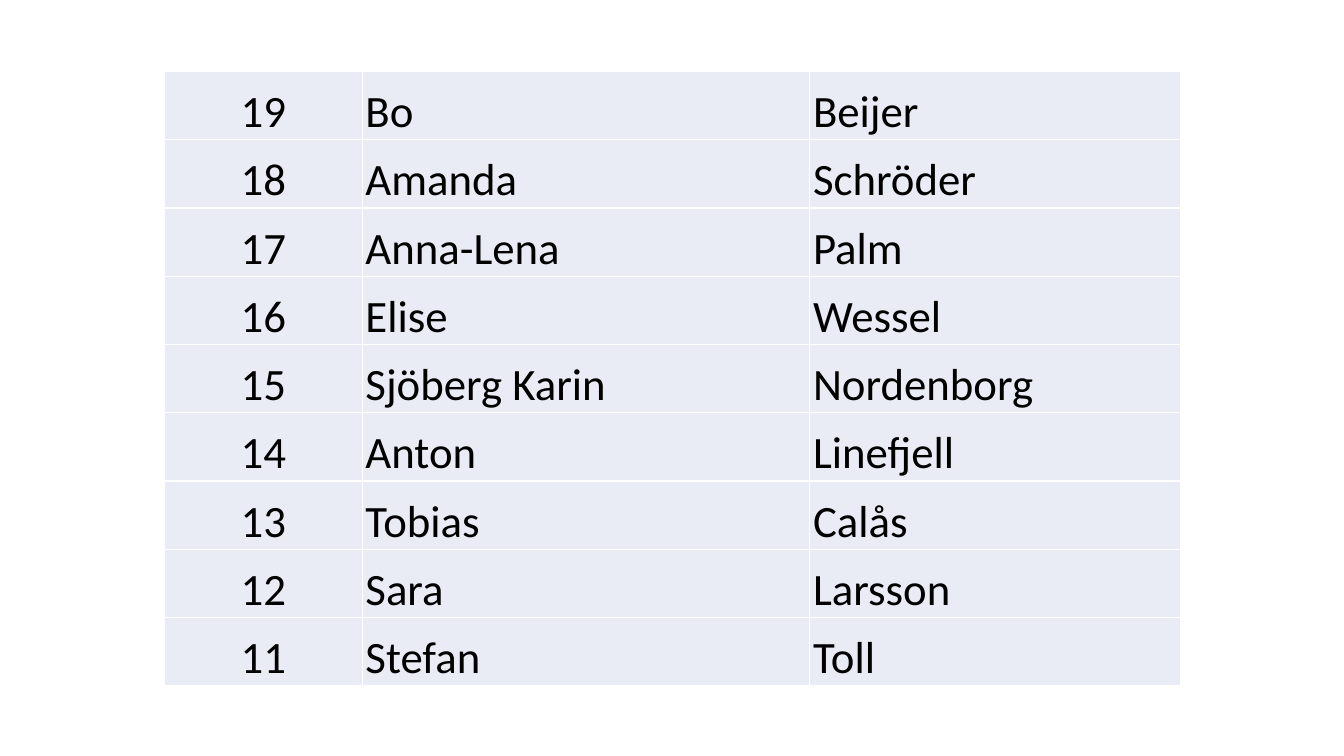
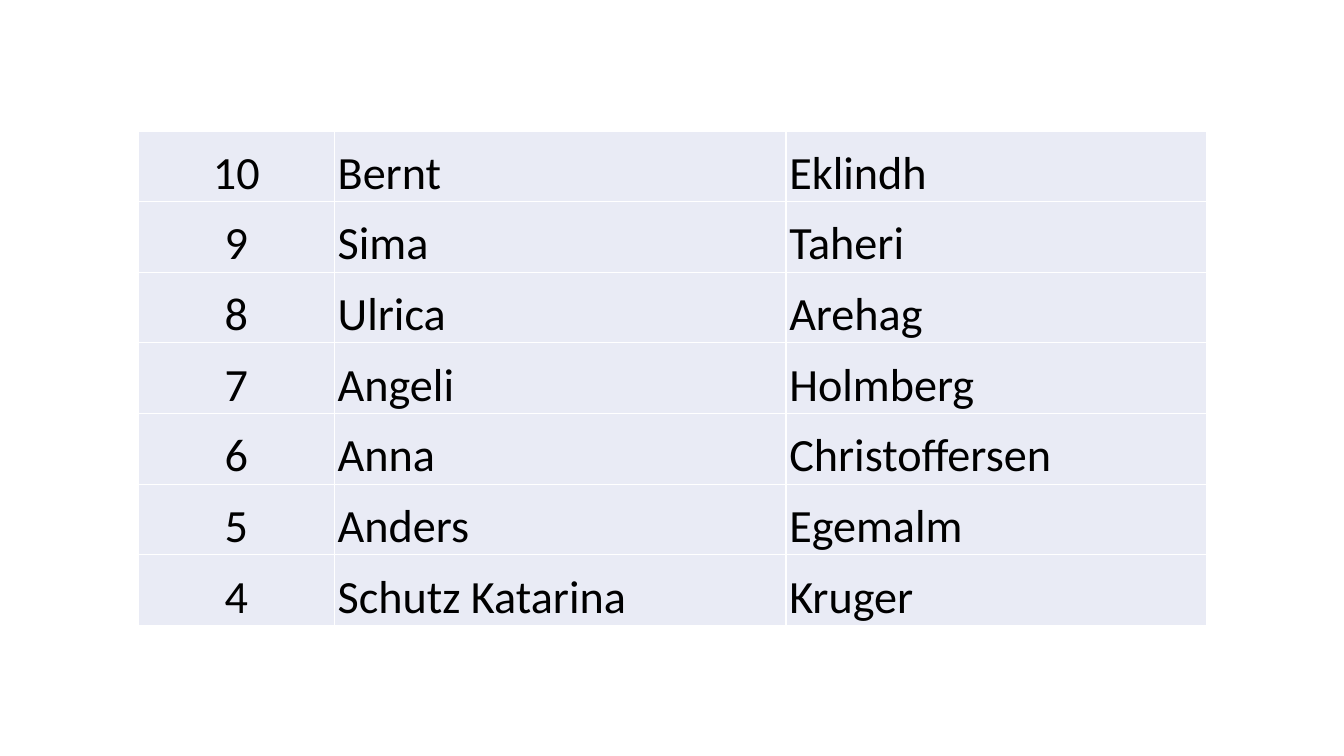
import pptx
import pptx.dml.color
import pptx.enum.text
import pptx.oxml
import pptx.oxml.ns
import pptx.util

Cm = pptx.util.Cm
Pt = pptx.util.Pt
RGBColor = pptx.dml.color.RGBColor
PP_ALIGN = pptx.enum.text.PP_ALIGN

BLACK = RGBColor(0x00, 0x00, 0x00)
WHITE = RGBColor(0xFF, 0xFF, 0xFF)
PALE_BLUE = RGBColor(0xE9, 0xEB, 0xF5)

# First and last names, listed from the highest number down
NAMES_FROM_19 = [
    ("Bo", "Beijer"),
    ("Amanda", "Schröder"),
    ("Anna-Lena", "Palm"),
    ("Elise", "Wessel"),
    ("Sjöberg Karin", "Nordenborg"),
    ("Anton", "Linefjell"),
    ("Tobias", "Calås"),
    ("Sara", "Larsson"),
    ("Stefan", "Toll"),
]
NAMES_FROM_10 = [
    ("Bernt", "Eklindh"),
    ("Sima", "Taheri"),
    ("Ulrica", "Arehag"),
    ("Angeli", "Holmberg"),
    ("Anna", "Christoffersen"),
    ("Anders", "Egemalm"),
    ("Schutz Katarina", "Kruger"),
]


class Deck:
    """Holds the shared style and the current slide."""

    font = "Calibri"
    margin = Cm(0.08)
    border = Pt(1)

    def __init__(self):
        self.prs = pptx.Presentation()
        self.prs.slide_width = Cm(33.87)
        self.prs.slide_height = Cm(19.05)
        self.s = None

    def add_slide(self):
        self.s = self.prs.slides.add_slide(self.prs.slide_layouts[6])

    def add_borders(self, cell):
        tc_pr = cell._tc.get_or_add_tcPr()
        for side in ("lnL", "lnR", "lnT", "lnB"):
            tc_pr.append(pptx.oxml.parse_xml(
                f'<a:{side} {pptx.oxml.ns.nsdecls("a")} w="{self.border}">'
                f'<a:solidFill><a:srgbClr val="{WHITE}"/></a:solidFill>'
                f'</a:{side}>'))

    def fill_cell(self, cell, text, size, align):
        self.add_borders(cell)
        cell.fill.solid()
        cell.fill.fore_color.rgb = PALE_BLUE
        cell.vertical_anchor = pptx.enum.text.MSO_ANCHOR.BOTTOM
        cell.margin_left = cell.margin_right = cell.margin_top = self.margin
        cell.margin_bottom = 0
        p = cell.text_frame.paragraphs[0]
        p.text = text
        p.alignment = align
        r = p.runs[0]
        r.font.name = self.font
        r.font.size = Pt(size)
        r.font.color.rgb = BLACK

    def add_name_table(self, first_number, names, left, top, widths,
                       row_height, size):
        sp = self.s.shapes.add_table(
            len(names), len(widths), Cm(left), Cm(top),
            Cm(sum(widths)), Cm(row_height * len(names)))
        table = sp.table
        table.first_row = table.horz_banding = False
        for column, width in zip(table.columns, widths):
            column.width = Cm(width)
        for i, name in enumerate(names):
            table.rows[i].height = Cm(row_height)
            for j, text in enumerate((str(first_number - i), *name)):
                align = PP_ALIGN.LEFT if j else PP_ALIGN.CENTER
                self.fill_cell(table.cell(i, j), text, size, align)


def main():
    deck = Deck()

    # Numbers 19 to 11
    deck.add_slide()
    deck.add_name_table(19, NAMES_FROM_19, left=4.15, top=1.8,
                        widths=(4.98, 11.28, 9.35), row_height=1.72, size=32)

    # Numbers 10 to 4
    deck.add_slide()
    deck.add_name_table(10, NAMES_FROM_10, left=3.48, top=3.3,
                        widths=(4.95, 11.38, 10.59), row_height=1.78, size=33)

    deck.prs.save("out.pptx")


if __name__ == "__main__":
    main()
